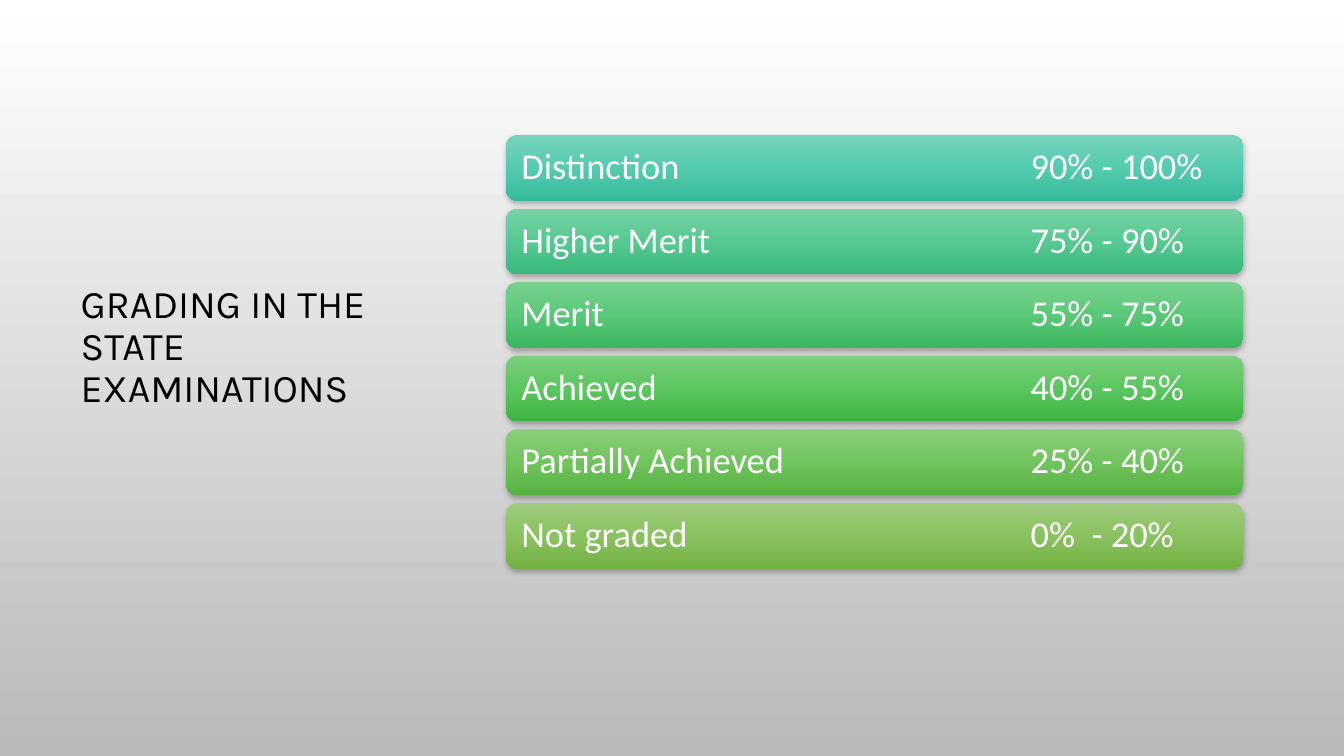
from copy import deepcopy
from dataclasses import dataclass

from lxml import etree
from pptx import Presentation
from pptx.dml.color import RGBColor
from pptx.enum.shapes import MSO_SHAPE
from pptx.enum.text import MSO_ANCHOR, MSO_AUTO_SIZE, PP_ALIGN
from pptx.oxml.ns import qn
from pptx.util import Inches, Pt

ROUNDED = MSO_SHAPE.ROUNDED_RECTANGLE
MIDDLE = MSO_ANCHOR.MIDDLE
LEFT = PP_ALIGN.LEFT

TITLE = "GRADING IN THE STATE EXAMINATIONS"
# grade, range of marks, gradient from top to bottom
GRADES = [
    ("Distinction", "90% - 100%", ("77D4BC", "54CBAF", "36BA9C")),
    ("Higher Merit", "75% - 90%", ("78D2A5", "56C992", "38B87C")),
    ("Merit", "55% - 75%", ("79D190", "59C877", "3BB65E")),
    ("Achieved", "40% - 55%", ("7BCF7E", "5BC65F", "3DB442")),
    ("Partially Achieved", "25% - 40%", ("8BCE7C", "70C45D", "57B240")),
    ("Not graded", "0%  - 20%", ("9ECC7E", "8AC25F", "73B142")),
]


@dataclass(frozen=True)
class Theme:
    background: tuple = ("FFFFFF", "B9B9B9")
    title_color: str = "000000"
    bar_color: str = "FFFFFF"
    shadow: str = "000000"
    title_font: str = "Karla"
    bar_font: str = "Calibri"
    title_size: int = 28
    bar_size: int = 26


THEME = Theme()
BAR_LEFT, BAR_TOP, BAR_WIDTH, BAR_HEIGHT = 5.02, 1.34, 7.31, 0.65
BAR_PITCH = 0.73
MARKS_TAB = 5.05


def fill_gradient(fill, element, colors):
    """Fill downwards with evenly spaced colours; element holds the fill's XML."""
    fill.gradient()
    fill.gradient_angle = 270
    stops = element.find(".//" + qn("a:gsLst"))
    while len(stops) < len(colors):
        stops.append(deepcopy(stops[-1]))
    for i, (stop, color) in enumerate(zip(fill.gradient_stops, colors)):
        stop.position = i / (len(colors) - 1)
        stop.color.rgb = RGBColor.from_string(color)


def add_shadow(shape):
    shape.shadow.inherit = False
    effects = shape._element.spPr.find(qn("a:effectLst"))
    outer = etree.SubElement(effects, qn("a:outerShdw"), blurRad=str(Pt(4)),
                             dist=str(Pt(2)), dir="5400000", rotWithShape="0")
    color = etree.SubElement(outer, qn("a:srgbClr"), val=THEME.shadow)
    etree.SubElement(color, qn("a:alpha"), val="28000")


def format_paragraph(p, font, size, color):
    p.alignment = LEFT
    p.line_spacing = 0.9
    p.font.name = font
    p.font.size = Pt(size)
    p.font.color.rgb = RGBColor.from_string(color)


def add_title(s):
    title = s.shapes.title
    title.left, title.top = Inches(0.7), Inches(1.44)
    title.width, title.height = Inches(3.11), Inches(4.02)
    tf = title.text_frame
    tf.text = TITLE
    tf.word_wrap = True
    tf.auto_size = MSO_AUTO_SIZE.NONE
    tf.vertical_anchor = MIDDLE
    format_paragraph(tf.paragraphs[0], THEME.title_font, THEME.title_size,
                     THEME.title_color)


def add_bar(s, top, grade, marks, colors):
    bar = s.shapes.add_shape(ROUNDED, Inches(BAR_LEFT), Inches(top),
                             Inches(BAR_WIDTH), Inches(BAR_HEIGHT))
    fill_gradient(bar.fill, bar._element.spPr, colors)
    bar.line.fill.background()
    add_shadow(bar)
    tf = bar.text_frame
    tf.word_wrap = True
    tf.vertical_anchor = MIDDLE
    tf.margin_left = tf.margin_right = Inches(0.12)
    p = tf.paragraphs[0]
    p.text = f"{grade}\t{marks}"
    tabs = etree.SubElement(p._p.get_or_add_pPr(), qn("a:tabLst"))
    etree.SubElement(tabs, qn("a:tab"), pos=str(Inches(MARKS_TAB)), algn="l")
    format_paragraph(p, THEME.bar_font, THEME.bar_size, THEME.bar_color)


def main():
    prs = Presentation()
    prs.slide_width, prs.slide_height = Inches(13.33), Inches(7.5)
    s = prs.slides.add_slide(prs.slide_layouts[5])
    fill_gradient(s.background.fill, s._element, THEME.background)
    add_title(s)
    for i, (grade, marks, colors) in enumerate(GRADES):
        add_bar(s, BAR_TOP + i * BAR_PITCH, grade, marks, colors)
    prs.save("out.pptx")


if __name__ == "__main__":
    main()
